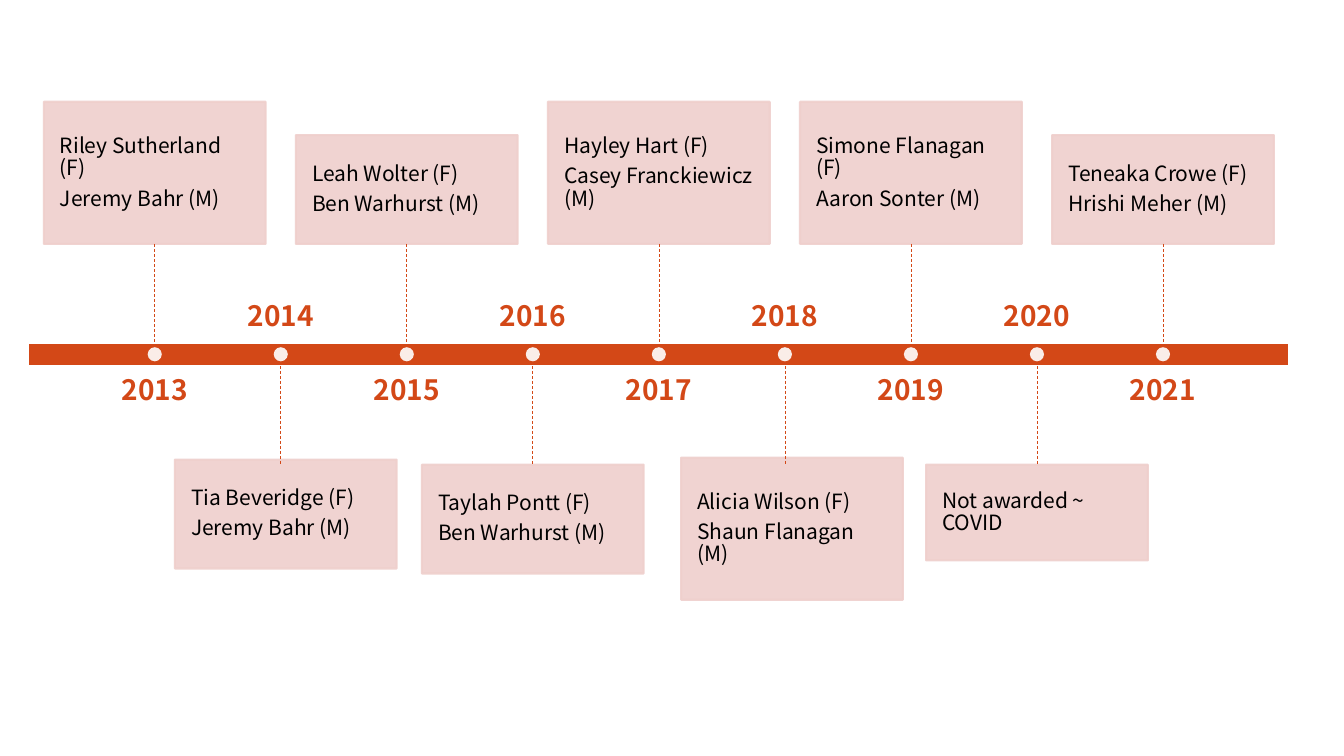
from pptx import Presentation
from pptx.dml.color import RGBColor
from pptx.enum.dml import MSO_LINE
from pptx.enum.shapes import MSO_CONNECTOR, MSO_SHAPE
from pptx.enum.text import MSO_ANCHOR, PP_ALIGN
from pptx.oxml.ns import qn
from pptx.util import Inches, Pt
from lxml.etree import SubElement

FONT = "Noto Sans CJK JP"
ACCENT, CARD, WHITE, BLACK = "D34817", "EFCFCC", "FFFFFF", "000000"
BAR = (0.28, 3.4, 12.51, 0.23)
STEP = 1.25
CARD_WIDTH, YEAR_WIDTH, YEAR_HEIGHT = 2.2, 2, 0.65
STEM, YEAR_GAP, DOT = 0.98, 0.1, 0.14
TALL, MEDIUM, SHORT = 1.41, 1.08, 0.95

# year, names, card height, card offset from its regular place
WINNERS = [
    ("2013", ["Riley Sutherland (F)", "Jeremy Bahr (M)"], TALL, (0, 0)),
    ("2014", ["Tia Beveridge (F)", "Jeremy Bahr (M)"], MEDIUM, (0.05, -0.05)),
    ("2015", ["Leah Wolter (F)", "Ben Warhurst (M)"], MEDIUM, (0, 0)),
    ("2016", ["Taylah Pontt (F)", "Ben Warhurst (M)"], MEDIUM, (0, 0)),
    ("2017", ["Hayley Hart (F)", "Casey Franckiewicz (M)"], TALL, (0, 0)),
    ("2018", ["Alicia Wilson (F)", "Shaun Flanagan (M)"], TALL, (0.07, -0.07)),
    ("2019", ["Simone Flanagan (F)", "Aaron Sonter (M)"], TALL, (0, 0)),
    ("2020", ["Not awarded ~ COVID"], SHORT, (0, 0)),
    ("2021", ["Teneaka Crowe (F)", "Hrishi Meher (M)"], MEDIUM, (0, 0)),
]


def color(value):
    """Turn a hex string into a colour."""
    return RGBColor.from_string(value)


def add_block(page, kind, box, fill, line=None, opacity=100):
    """Add a filled shape, outlined when a line colour is given."""
    shape = page.shapes.add_shape(kind, *map(Inches, box))
    shape.shadow.inherit = False
    shape.fill.solid()
    shape.fill.fore_color.rgb = color(fill)
    if line:
        shape.line.color.rgb = color(line)
        shape.line.width = Pt(1.5)
    else:
        shape.line.fill.background()
    if opacity < 100:
        for tint in shape._element.spPr.iter(qn("a:srgbClr")):
            SubElement(tint, qn("a:alpha")).set("val", str(opacity * 1000))
    return shape


def write(shape, lines, size, ink, anchor, align, inset=0, bold=False):
    """Write one paragraph per line into a shape."""
    frame = shape.text_frame
    frame.word_wrap = True
    frame.vertical_anchor = anchor
    frame.margin_left = frame.margin_right = Inches(inset)
    frame.margin_top = frame.margin_bottom = Inches(inset)
    for index, line in enumerate(lines):
        para = frame.add_paragraph() if index else frame.paragraphs[0]
        para.alignment = align
        para.line_spacing = 0.9
        para.space_after = Pt(size * 0.35)
        run = para.add_run()
        run.text = line
        run.font.name, run.font.size, run.font.bold = FONT, Pt(size), bold
        run.font.color.rgb = color(ink)


def add_stem(page, x, start, end):
    """Add a dashed vertical line."""
    stem = page.shapes.add_connector(
        MSO_CONNECTOR.STRAIGHT, Inches(x), Inches(start), Inches(x), Inches(end))
    stem.line.color.rgb = color(ACCENT)
    stem.line.width = Pt(0.5)
    stem.line.dash_style = MSO_LINE.DASH
    SubElement(stem._element.spPr, qn("a:effectLst"))
    return stem


def add_entry(page, bar, x, above, entry):
    """Add one year: its label, card, stem and dot, centred on x."""
    year, names, height, (shift_x, shift_y) = entry
    top, bottom = BAR[1], BAR[1] + BAR[3]
    year_top = bottom + YEAR_GAP if above else top - YEAR_GAP - YEAR_HEIGHT
    label = page.shapes.add_textbox(*map(Inches, (
        x - YEAR_WIDTH / 2, year_top, YEAR_WIDTH, YEAR_HEIGHT)))
    write(label, [year], 20, ACCENT,
          MSO_ANCHOR.TOP if above else MSO_ANCHOR.BOTTOM, PP_ALIGN.CENTER, bold=True)

    card_top = top - STEM - height if above else bottom + STEM
    card_box = (x - CARD_WIDTH / 2 + shift_x, card_top + shift_y, CARD_WIDTH, height)
    card = add_block(page, MSO_SHAPE.RECTANGLE, card_box, CARD, CARD, 90)
    write(card, names, 15, BLACK, MSO_ANCHOR.MIDDLE, PP_ALIGN.LEFT, 0.16)

    if above:
        stem = add_stem(page, x, top - STEM, top)
        stem.begin_connect(card, 2)
        if x == BAR[0] + BAR[2] / 2:
            stem.end_connect(bar, 0)
    else:
        stem = add_stem(page, x, bottom, bottom + STEM)
        if not shift_x:
            stem.end_connect(card, 0)

    dot_box = (x - DOT / 2, (top + bottom - DOT) / 2, DOT, DOT)
    add_block(page, MSO_SHAPE.OVAL, dot_box, WHITE, opacity=90)


def add_timeline(page):
    """Add the bar and its years, alternating above and below."""
    bar = add_block(page, MSO_SHAPE.RECTANGLE, BAR, ACCENT, WHITE)
    middle = BAR[0] + BAR[2] / 2
    for index, entry in enumerate(WINNERS):
        x = middle + (index - len(WINNERS) // 2) * STEP
        add_entry(page, bar, x, index % 2 == 0, entry)


def main():
    """Build the deck and save it."""
    deck = Presentation()
    deck.slide_width, deck.slide_height = Inches(13.33), Inches(7.5)
    add_timeline(deck.slides.add_slide(deck.slide_layouts[6]))
    deck.save("out.pptx")


if __name__ == "__main__":
    main()
